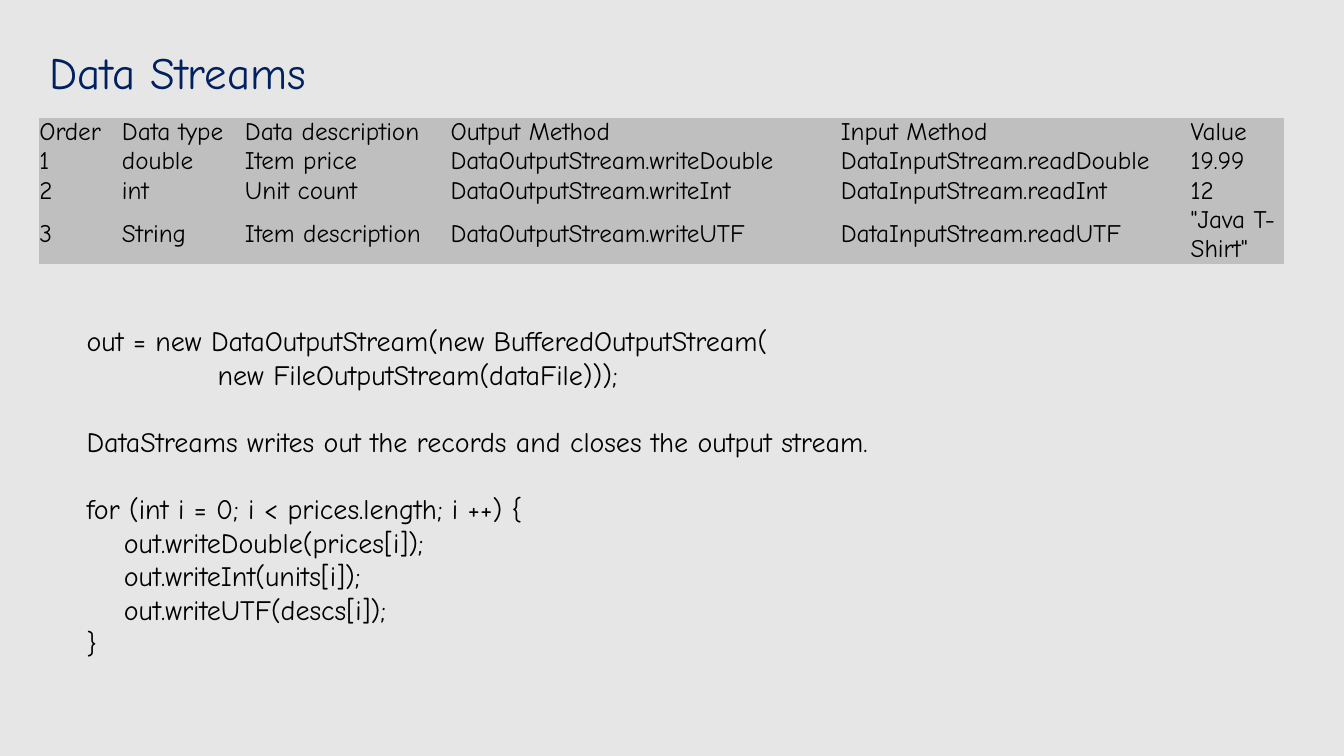
from pptx import Presentation
from pptx.dml.color import RGBColor
from pptx.enum.text import MSO_ANCHOR, PP_ALIGN
from pptx.oxml.ns import qn
from pptx.util import Inches, Pt

MIDDLE = MSO_ANCHOR.MIDDLE
LEFT = PP_ALIGN.LEFT
FONT = "Comic Neue"
PLAIN = "{2D5ABB26-0587-4C30-8999-92F81FD0307C}"
COLORS = {"back": "E6E6E6", "title": "002060", "text": "000000", "cell": "BFBFBF"}

WIDTHS = [0.82, 1.22, 2.04, 3.87, 3.47, 0.93]
HEIGHTS = [0.29, 0.29, 0.29, 0.58]
ROWS = [
    ["Order", "Data type", "Data description", "Output Method", "Input Method", "Value"],
    ["1", "double", "Item price", "DataOutputStream.writeDouble",
     "DataInputStream.readDouble", "19.99"],
    ["2", "int", "Unit count", "DataOutputStream.writeInt",
     "DataInputStream.readInt", "12"],
    ["3", "String", "Item description", "DataOutputStream.writeUTF",
     "DataInputStream.readUTF", '"Java T-Shirt"'],
]
# Each line holds its text, left indent in inches and space before in points.
LINES = [
    ("out = new DataOutputStream(new BufferedOutputStream(", 0, 0),
    ("new FileOutputStream(dataFile)));", 1.3, 0),
    ("DataStreams writes out the records and closes the output stream.", 0, 24),
    ("for (int i = 0; i < prices.length; i ++) {", 0, 24),
    ("out.writeDouble(prices[i]);", 0.37, 0),
    ("out.writeInt(units[i]);", 0.37, 0),
    ("out.writeUTF(descs[i]);", 0.37, 0),
    ("}", 0, 0),
]


def color(name):
    """Return the named colour."""
    return RGBColor.from_string(COLORS[name])


def add_run(para, text, size, tint="text"):
    """Add one styled run to a left-aligned paragraph."""
    para.alignment = LEFT
    run = para.add_run()
    run.text = text
    run.font.name = FONT
    run.font.size = Pt(size)
    run.font.color.rgb = color(tint)


def add_title(slide, text):
    """Place and fill the title."""
    title = slide.shapes.title
    title.left, title.top = Inches(0.39), Inches(0.39)
    title.width, title.height = Inches(3.3), Inches(0.64)
    title.text_frame.vertical_anchor = MIDDLE
    add_run(title.text_frame.paragraphs[0], text, 32, "title")


def fill_cell(cell, text):
    """Fill one table cell without margins."""
    cell.fill.solid()
    cell.fill.fore_color.rgb = color("cell")
    cell.vertical_anchor = MIDDLE
    cell.margin_left = cell.margin_right = Inches(0)
    cell.margin_top = cell.margin_bottom = Inches(0)
    add_run(cell.text_frame.paragraphs[0], text, 18)


def add_grid(slide):
    """Add the table of data records."""
    frame = slide.shapes.add_table(
        len(ROWS), len(WIDTHS), Inches(0.39), Inches(1.17),
        Inches(sum(WIDTHS)), Inches(sum(HEIGHTS)))
    for style in frame.element.iter(qn("a:tableStyleId")):
        style.text = PLAIN
    table = frame.table
    table.first_row = table.horz_banding = False
    for col, width in zip(table.columns, WIDTHS):
        col.width = Inches(width)
    for row, height, texts in zip(table.rows, HEIGHTS, ROWS):
        row.height = Inches(height)
        for cell, text in zip(row.cells, texts):
            fill_cell(cell, text)


def add_code(slide):
    """Add the code lines with indents and gaps."""
    box = slide.shapes.add_textbox(
        Inches(0.76), Inches(3.16), Inches(12.15), Inches(3.47))
    frame = box.text_frame
    frame.word_wrap = True
    for i, (text, indent, gap) in enumerate(LINES):
        para = frame.add_paragraph() if i else frame.paragraphs[0]
        para.space_before = Pt(gap)
        add_run(para, text, 20)
        props = para._p.get_or_add_pPr()
        props.set("marL", str(Inches(indent)))
        props.set("indent", "0")


def main():
    """Build and save the slide."""
    deck = Presentation()
    deck.slide_width, deck.slide_height = Inches(13.33), Inches(7.5)
    slide = deck.slides.add_slide(deck.slide_layouts[5])
    slide.background.fill.solid()
    slide.background.fill.fore_color.rgb = color("back")
    add_title(slide, "Data Streams")
    add_grid(slide)
    add_code(slide)
    deck.save("out.pptx")


if __name__ == "__main__":
    main()
